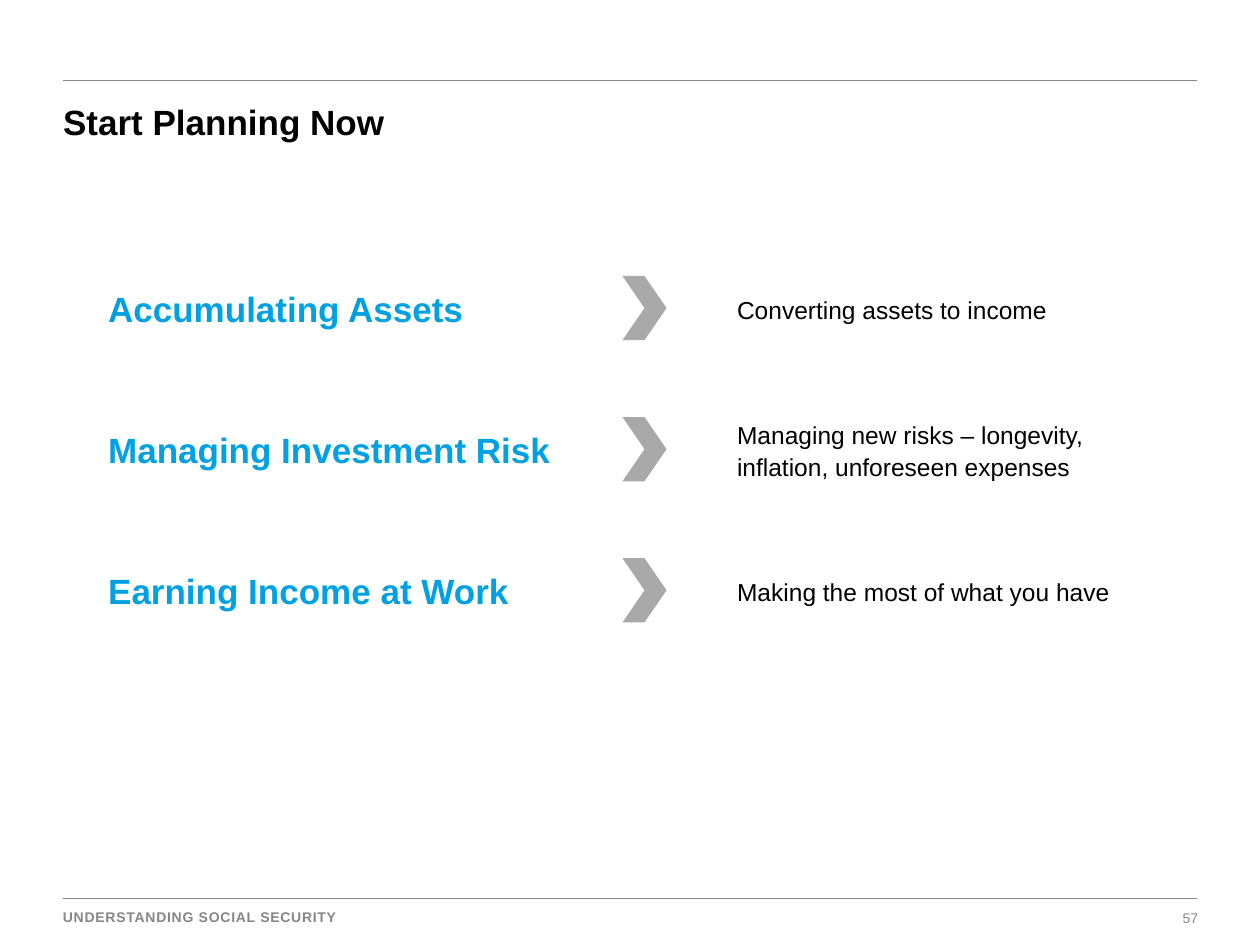
from dataclasses import dataclass
from typing import NamedTuple

from lxml.etree import SubElement
from pptx import Presentation
from pptx.dml.color import RGBColor
from pptx.enum.shapes import MSO_CONNECTOR, MSO_SHAPE
from pptx.enum.text import MSO_ANCHOR as Anchor, MSO_AUTO_SIZE as AutoSize, PP_ALIGN as Align
from pptx.oxml.ns import qn
from pptx.util import Inches, Pt

# Grid: 20 columns by 15 rows
WIDTH, HEIGHT = Inches(10), Inches(7.5)
COLUMN, ROW = WIDTH / 20, HEIGHT / 15


@dataclass(frozen=True)
class Theme:
    font: str = "Arial"
    ink: str = "000000"
    accent: str = "00A1E2"
    muted: str = "868686"
    arrow: str = "A9A9A9"
    heading: int = 20
    body: int = 14
    footer: int = 8


class Area(NamedTuple):
    col: float
    row: float
    cols: float
    rows: float

    def emu(self) -> tuple[int, int, int, int]:
        return (round(self.col * COLUMN), round(self.row * ROW),
                round(self.cols * COLUMN), round(self.rows * ROW))


class Style(NamedTuple):
    size: int
    color: str
    bold: bool = False
    tracking: int = 0  # hundredths of a point


class Shift(NamedTuple):
    before: str
    before_cols: float
    after: str


THEME = Theme()
HEADING = Style(THEME.heading, THEME.ink, True)
BEFORE = Style(THEME.heading, THEME.accent, True)
AFTER = Style(THEME.body, THEME.ink)
FOOTER = Style(THEME.footer, THEME.muted, True, 40)
PAGE = Style(THEME.footer, THEME.muted)

SHIFTS = [
    Shift("Accumulating Assets", 6.08, "Converting assets to income"),
    Shift("Managing Investment Risk", 7.48,
          "Managing new risks – longevity, inflation, unforeseen expenses"),
    Shift("Earning Income at Work", 6.82, "Making the most of what you have"),
]
FIRST_ROW, ROW_STEP, BAND_ROWS = 4.38, 2.24, 1.02


def add_text(slide, area: Area, text: str, style: Style, *, wrap: bool = False,
             grow: bool = False, insets: tuple[float, float] = (0, 0),
             align: Align = Align.LEFT, anchor: Anchor = Anchor.TOP):
    frame = slide.shapes.add_textbox(*area.emu()).text_frame
    frame.word_wrap = wrap
    frame.auto_size = AutoSize.SHAPE_TO_FIT_TEXT if grow else AutoSize.NONE
    frame.vertical_anchor = anchor
    frame.margin_left = frame.margin_right = Inches(insets[0])
    frame.margin_top = frame.margin_bottom = Inches(insets[1])
    paragraph = frame.paragraphs[0]
    paragraph.alignment = align
    run = paragraph.add_run()
    run.text = text
    font = run.font
    font.name, font.size, font.bold = THEME.font, Pt(style.size), style.bold
    font.color.rgb = RGBColor.from_string(style.color)
    if style.tracking:
        run._r.get_or_add_rPr().set("spc", str(style.tracking))
    return paragraph


def add_rule(slide, row: float) -> None:
    left, top, width, _ = Area(1, row, 18, 0).emu()
    rule = slide.shapes.add_connector(MSO_CONNECTOR.STRAIGHT, left, top, left + width, top)
    rule.line.color.rgb = RGBColor.from_string(THEME.muted)
    rule.line.width = Pt(1)
    SubElement(rule._element.spPr, qn("a:effectLst"))


def add_chevron(slide, area: Area) -> None:
    chevron = slide.shapes.add_shape(MSO_SHAPE.CHEVRON, *area.emu())
    chevron.shadow.inherit = False
    chevron.fill.solid()
    chevron.fill.fore_color.rgb = RGBColor.from_string(THEME.arrow)
    chevron.line.fill.background()


def add_shift(slide, shift: Shift, row: float) -> None:
    outcome = add_text(slide, Area(11.7, row, 6, BAND_ROWS), shift.after, AFTER,
                       wrap=True, insets=(0, 0.01), anchor=Anchor.MIDDLE)
    outcome.line_spacing = 1.1
    outcome.space_after = Pt(0.35 * THEME.body)
    add_text(slide, Area(1.52, row + 0.08, shift.before_cols, 0.88), shift.before, BEFORE,
             grow=True, insets=(0.1, 0.05))
    add_chevron(slide, Area(9.88, row, 0.7, BAND_ROWS))


def main() -> None:
    deck = Presentation()
    deck.slide_width, deck.slide_height = WIDTH, HEIGHT
    slide = deck.slides.add_slide(deck.slide_layouts[6])

    # Frame and footer
    for row in (1.28, 14.26):
        add_rule(slide, row)
    add_text(slide, Area(18.74, 14.44, 0.28, 0.26), "57", PAGE, grow=True, align=Align.RIGHT)
    add_text(slide, Area(1, 14.42, 6.2, 0.3), "UNDERSTANDING SOCIAL SECURITY", FOOTER)

    # Title
    add_text(slide, Area(1, 1.6, 17.98, 0.68), "Start Planning Now", HEADING,
             wrap=True, grow=True)

    # Shifts from working life to retirement
    for index, shift in enumerate(SHIFTS):
        add_shift(slide, shift, FIRST_ROW + index * ROW_STEP)

    deck.save("out.pptx")


if __name__ == "__main__":
    main()
